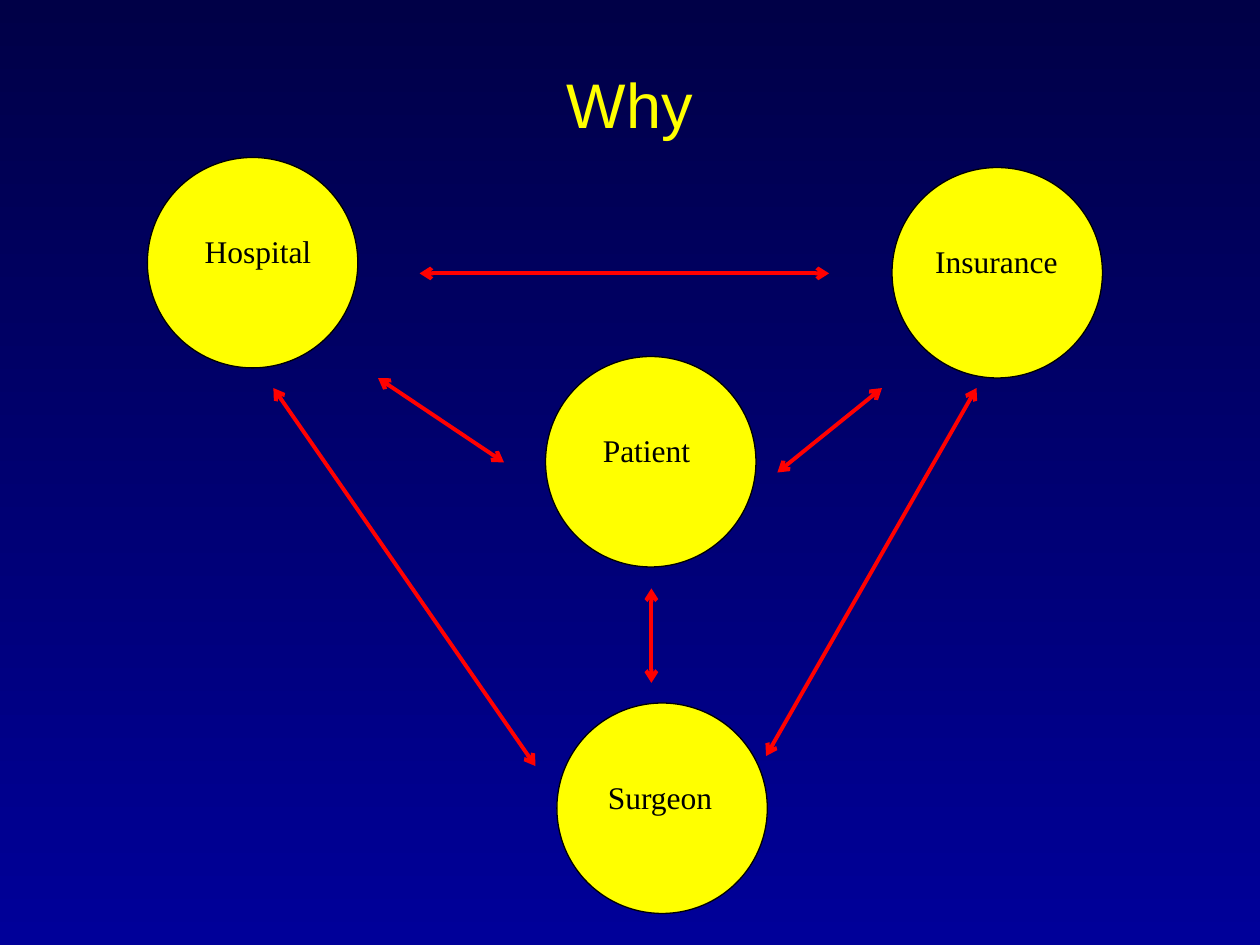
from lxml import etree
from pptx import Presentation
from pptx.dml.color import RGBColor
from pptx.enum.shapes import MSO_CONNECTOR, MSO_SHAPE
from pptx.enum.text import MSO_ANCHOR, PP_ALIGN
from pptx.oxml.ns import qn
from pptx.util import Inches, Pt

ELLIPSE = MSO_SHAPE.OVAL
STRAIGHT = MSO_CONNECTOR.STRAIGHT
TOP = MSO_ANCHOR.TOP
LEFT, CENTER = PP_ALIGN.LEFT, PP_ALIGN.CENTER

COLORS = {
    "background_top": "000047",
    "background_bottom": "000099",
    "yellow": "FFFF00",
    "black": "000000",
    "arrow": "FF0000",
}
DIAMETER = 1.67

# Party, left, top, text indent
PARTIES = [
    ("Patient", 4.33, 2.83, 0.11),
    ("Hospital", 1.17, 1.25, 0.11),
    ("Surgeon", 4.42, 5.58, 0.06),
    ("Insurance", 7.08, 1.33, 0),
]

# Start and end of each two-way relation
RELATIONS = [
    ((3, 3), (4, 3.67)),
    ((7, 3.08), (6.17, 3.75)),
    ((3.33, 2.17), (6.58, 2.17)),
    ((5.17, 4.67), (5.17, 5.42)),
    ((6.08, 6), (7.75, 3.08)),
    ((4.25, 6.08), (2.17, 3.08)),
]


def color(name):
    return RGBColor.from_string(COLORS[name])


class SlideBuilder:
    def __init__(self, slide):
        self.slide = slide
        self.title_font = "Arial"
        self.label_font = "Times New Roman"

    def background(self):
        fill = self.slide.background.fill
        fill.gradient()
        fill.gradient_angle = 270
        for stop, name in zip(fill.gradient_stops, ("background_top", "background_bottom")):
            stop.color.rgb = color(name)

    def format_text(self, text_frame, font_name, size, color_name, alignment):
        text_frame.word_wrap = True
        text_frame.vertical_anchor = TOP
        paragraph = text_frame.paragraphs[0]
        paragraph.alignment = alignment
        font = paragraph.runs[0].font
        font.name = font_name
        font.size = Pt(size)
        font.color.rgb = color(color_name)

    def title(self, text):
        shape = self.slide.shapes.add_textbox(0, Inches(0.5), Inches(10), Inches(0.75))
        text_frame = shape.text_frame
        text_frame.text = text
        text_frame.margin_top = Inches(0.09)
        text_frame.paragraphs[0].line_spacing = 0.9
        self.format_text(text_frame, self.title_font, 36, "yellow", CENTER)

    def circle(self, text, left, top, indent):
        shape = self.slide.shapes.add_shape(
            ELLIPSE, Inches(left), Inches(top), Inches(DIAMETER), Inches(DIAMETER))
        shape.shadow.inherit = False
        shape.fill.solid()
        shape.fill.fore_color.rgb = color("yellow")
        shape.line.color.rgb = color("black")
        shape.line.width = Pt(0.75)
        text_frame = shape.text_frame
        text_frame.text = text
        text_frame.margin_left = Inches(0.1 + indent)
        text_frame.margin_right = 0
        text_frame.margin_top = Inches(0.35)
        self.format_text(text_frame, self.label_font, 18, "black", LEFT)

    def double_arrow(self, start, end):
        connector = self.slide.shapes.add_connector(
            STRAIGHT, *(Inches(value) for value in (*start, *end)))
        connector.line.color.rgb = color("arrow")
        connector.line.width = Pt(2.25)
        line = connector.line._get_or_add_ln()
        for tag in ("a:headEnd", "a:tailEnd"):
            etree.SubElement(line, qn(tag), type="arrow")
        etree.SubElement(connector._element.spPr, qn("a:effectLst"))


def main():
    presentation = Presentation()
    presentation.slide_width = Inches(10)
    presentation.slide_height = Inches(7.5)
    builder = SlideBuilder(presentation.slides.add_slide(presentation.slide_layouts[6]))
    builder.background()
    builder.title("Why")
    for party in PARTIES:
        builder.circle(*party)
    for start, end in RELATIONS:
        builder.double_arrow(start, end)
    presentation.save("out.pptx")


if __name__ == "__main__":
    main()
